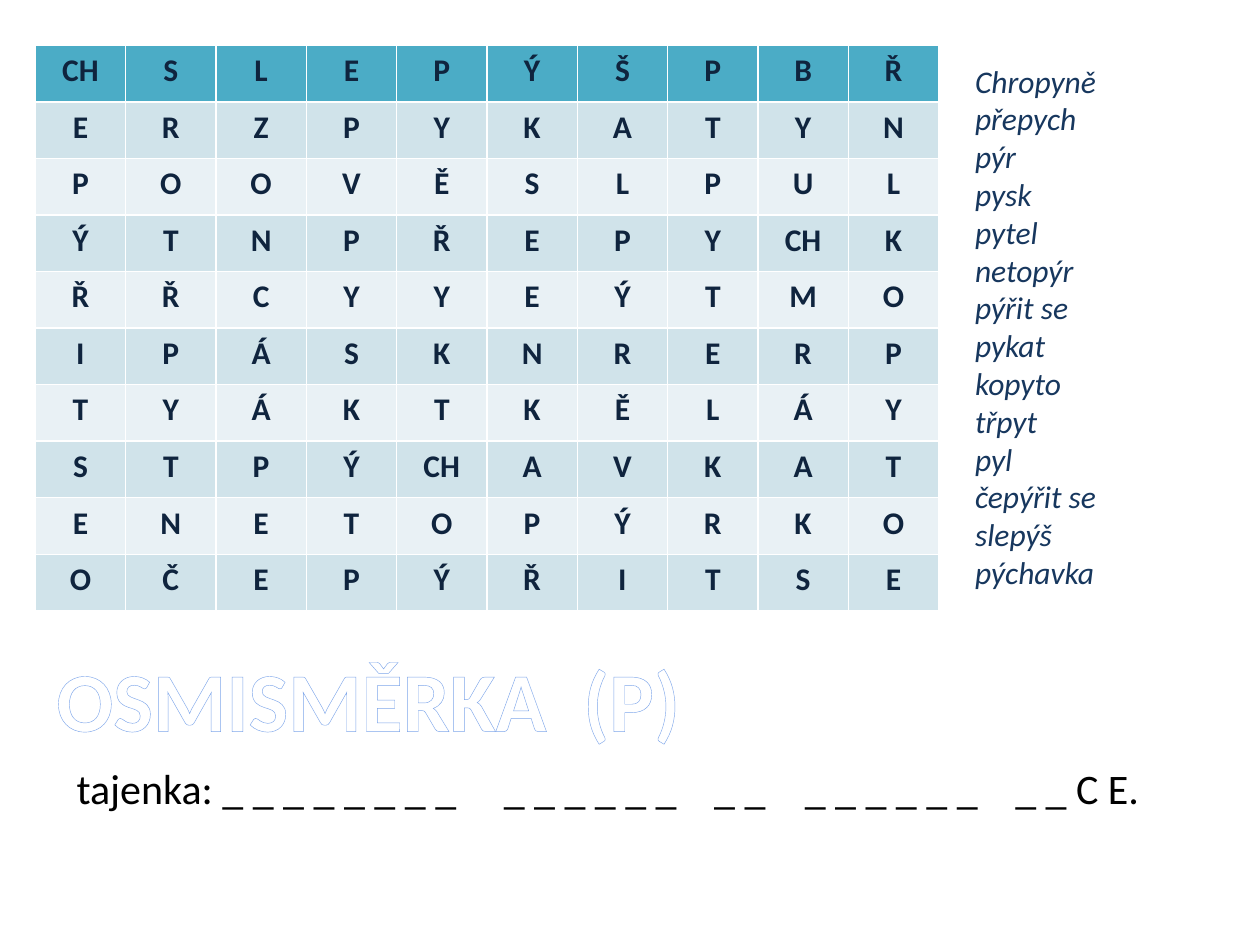
"""Build a Czech word-search slide with its word list, title and answer line."""
from lxml.etree import SubElement
from pptx import Presentation
from pptx.dml.color import RGBColor
from pptx.enum.text import MSO_AUTO_SIZE as AutoSize, PP_ALIGN as Align
from pptx.oxml.ns import qn
from pptx.util import Inches, Pt

FONT = "Calibri"
HEADER = RGBColor(0x4B, 0xAC, 0xC6)
BANDS = (RGBColor(0xE9, 0xF1, 0xF5), RGBColor(0xD0, 0xE3, 0xEA))
LETTER = RGBColor(0x0F, 0x24, 0x3E)
WORD = RGBColor(0x17, 0x37, 0x5E)
WHITE = RGBColor(0xFF, 0xFF, 0xFF)
BLACK = RGBColor(0x00, 0x00, 0x00)
OUTLINE = RGBColor(0x7E, 0xA6, 0xEA)

LETTERS = [row.split() for row in (
    "CH S L E P Ý Š P B Ř",
    "E R Z P Y K A T Y N",
    "P O O V Ě S L P U L",
    "Ý T N P Ř E P Y CH K",
    "Ř Ř C Y Y E Ý T M O",
    "I P Á S K N R E R P",
    "T Y Á K T K Ě L Á Y",
    "S T P Ý CH A V K A T",
    "E N E T O P Ý R K O",
    "O Č E P Ý Ř I T S E",
)]
WORDS = ["Chropyně", "přepych", "pýr", "pysk", "pytel", "netopýr", "pýřit se",
         "pykat", "kopyto", "třpyt", "pyl", "čepýřit se", "slepýš", "pýchavka"]
TITLE = ["OSMISMĚRKA", "(P)"]
TITLE_TABS = [4.18]
ANSWER = ["tajenka: _ _ _ _ _ _ _ _", "_ _ _ _ _ _", "_ _", "_ _ _ _ _ _", "_ _ C E."]
ANSWER_TABS = [3.39, 5.06, 5.78, 7.45]


def add_span(para, text, size, color, bold=False, italic=False):
    span = para.add_run()
    span.text = text
    font = span.font
    font.name, font.size, font.bold, font.italic = FONT, Pt(size), bold, italic
    font.color.rgb = color
    return span


def add_box(page, left, top, width, height):
    frame = page.shapes.add_textbox(*map(Inches, (left, top, width, height))).text_frame
    frame.word_wrap = True
    frame.auto_size = AutoSize.SHAPE_TO_FIT_TEXT
    return frame


def add_tabs(para, stops):
    tabs = SubElement(para._p.get_or_add_pPr(), qn("a:tabLst"))
    for stop in stops:
        SubElement(tabs, qn("a:tab"), pos=str(Inches(stop)), algn="l")


def add_outline(span, color, width):
    props = span.font._element
    line = props.makeelement(qn("a:ln"), {"w": str(Pt(width))})
    props.insert(0, line)
    SubElement(SubElement(line, qn("a:solidFill")), qn("a:srgbClr"), val=str(color))


def add_letter_grid(page, left, top, width, height):
    rows, columns = len(LETTERS), len(LETTERS[0])
    table = page.shapes.add_table(
        rows, columns, *map(Inches, (left, top, width, height))).table
    for r, letters in enumerate(LETTERS):
        for c, letter in enumerate(letters):
            cell = table.cell(r, c)
            cell.fill.solid()
            cell.fill.fore_color.rgb = BANDS[r % 2] if r else HEADER
            para = cell.text_frame.paragraphs[0]
            para.alignment = Align.CENTER
            add_span(para, letter, 18, LETTER, bold=True)


def main():
    deck = Presentation()
    deck.slide_width, deck.slide_height = Inches(10), Inches(7.5)
    page = deck.slides.add_slide(deck.slide_layouts[6])

    add_letter_grid(page, 0.28, 0.36, 7.17, 4.49)

    word_list = add_box(page, 7.64, 0.44, 2.05, 4.34)
    for i, word in enumerate(WORDS):
        para = word_list.add_paragraph() if i else word_list.paragraphs[0]
        add_span(para, word, 18, WORD, italic=True)

    title = add_box(page, 0.35, 5.09, 8.66, 0.91).paragraphs[0]
    add_tabs(title, TITLE_TABS)
    add_outline(add_span(title, "\t".join(TITLE), 48, WHITE, bold=True), OUTLINE, 2.48)

    answer = add_box(page, 0.51, 6, 9.17, 0.5).paragraphs[0]
    add_tabs(answer, ANSWER_TABS)
    add_span(answer, "\t".join(ANSWER), 24, BLACK)

    deck.save("out.pptx")


if __name__ == "__main__":
    main()
